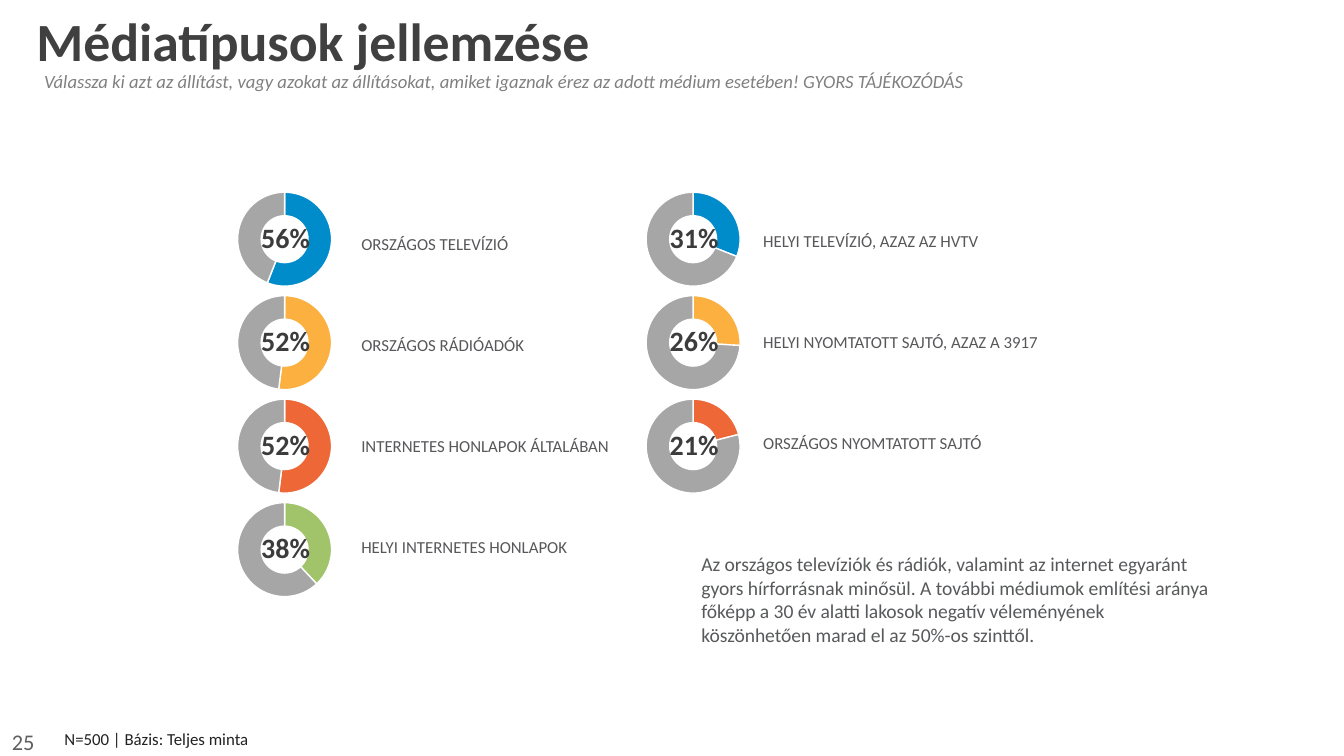
from lxml.etree import SubElement
from pptx import Presentation
from pptx.chart.data import CategoryChartData
from pptx.dml.color import RGBColor
from pptx.enum.chart import XL_CHART_TYPE
from pptx.enum.text import MSO_ANCHOR, PP_ALIGN
from pptx.oxml.ns import qn
from pptx.util import Inches, Pt

FONT = "Calibri"
REST = "A6A6A6"
RING_COLOURS = ["008BCA", "FBB040", "ED6737", "A1C46B"]
RING_TOP = 1.24
RING_STEP = 0.77
RING_COLUMNS = [(1.54, [56, 52, 52, 38]), (4.58, [31, 26, 21])]
LABEL_COLUMNS = [
    ((2.59, 1.69, 2.56, 2.52), [
        "ORSZÁGOS TELEVÍZIÓ",
        "ORSZÁGOS RÁDIÓADÓK",
        "INTERNETES HONLAPOK ÁLTALÁBAN",
        "HELYI INTERNETES HONLAPOK",
    ]),
    ((5.58, 1.67, 2.31, 1.77), [
        "HELYI TELEVÍZIÓ, AZAZ AZ HVTV",
        "HELYI NYOMTATOTT SAJTÓ, AZAZ A 3917",
        "ORSZÁGOS NYOMTATOTT SAJTÓ",
    ]),
]
QUESTION = (
    "Válassza ki azt az állítást, vagy azokat az állításokat, amiket igaznak "
    "érez az adott médium esetében! GYORS TÁJÉKOZÓDÁS"
)
SUMMARY = (
    "Az országos televíziók és rádiók, valamint az internet egyaránt gyors "
    "hírforrásnak minősül. A további médiumok említési aránya főképp a 30 év "
    "alatti lakosok negatív véleményének köszönhetően marad el az 50%-os szinttől."
)


def colour(value):
    """Turn a hex string into a colour."""
    return RGBColor.from_string(value)


def style_font(font, size, shade, bold=False, italic=False):
    """Set the typeface, size, colour and weight of a font."""
    font.name = FONT
    font.size = Pt(size)
    font.bold = bold
    font.italic = italic
    font.color.rgb = colour(shade)


def set_insets(frame, side, top):
    """Set equal insets left and right, and top and bottom."""
    frame.margin_left = frame.margin_right = Inches(side)
    frame.margin_top = frame.margin_bottom = Inches(top)


def add_span(para, text, size, shade, **weight):
    """Add one formatted run to a paragraph."""
    span = para.add_run()
    span.text = text
    style_font(span.font, size, shade, **weight)


def add_text(page, place, lines, size, shade, align=PP_ALIGN.LEFT, gap=0, **weight):
    """Add a wrapping text box with one paragraph a line."""
    box = page.shapes.add_textbox(*map(Inches, place))
    frame = box.text_frame
    frame.word_wrap = True
    for index, line in enumerate(lines):
        para = frame.add_paragraph() if index else frame.paragraphs[0]
        para.alignment = align
        if index and gap:
            para.space_before = Pt(gap)
        add_span(para, line, size, shade, **weight)
    return box


def set_plot_area(chart, x, y, w, h):
    """Place the inner plot area as fractions of the chart."""
    plot_area = chart._chartSpace.chart.plotArea
    layout = plot_area.find(qn("c:layout"))
    if layout is None:
        layout = SubElement(plot_area, qn("c:layout"))
        plot_area.insert(0, layout)
    manual = SubElement(layout, qn("c:manualLayout"))
    settings = [("layoutTarget", "inner"), ("xMode", "edge"), ("yMode", "edge"),
                ("x", x), ("y", y), ("w", w), ("h", h)]
    for name, value in settings:
        SubElement(manual, qn(f"c:{name}")).set("val", str(value))


def add_ring(page, left, top, share, shade):
    """Add a doughnut chart with its percentage in the middle."""
    data = CategoryChartData()
    data.categories = ["1", "2"]
    data.add_series("Series 1", [share, 100 - share])
    place = map(Inches, (left, top, 1.07, 1.06))
    chart = page.shapes.add_chart(XL_CHART_TYPE.DOUGHNUT, *place, data).chart
    chart.has_legend = False
    chart.has_title = False
    style_font(chart.font, 18, "003399")
    set_plot_area(chart, 0.17, 0.18, 0.74, 0.66)
    plot = chart.plots[0]
    plot.vary_by_categories = True
    plot._element.find(qn("c:holeSize")).set("val", "61")
    for index, fill in enumerate([shade, REST]):
        part = plot.series[0].points[index].format
        part.fill.solid()
        part.fill.fore_color.rgb = colour(fill)
        part.line.color.rgb = colour("FFFFFF")
        part.line.width = Pt(0.75)
    add_text(page, (left + 0.15, top + 0.35, 0.87, 0.35), [f"{share}%"],
             15, "3C3C3C", PP_ALIGN.CENTER, bold=True)


def add_title(page, text):
    """Place and format the title placeholder."""
    title = page.shapes.title
    title.left, title.top, title.width, title.height = map(
        Inches, (0.23, 0.01, 9.49, 0.51))
    frame = title.text_frame
    frame.vertical_anchor = MSO_ANCHOR.TOP
    set_insets(frame, 0.04, 0.05)
    para = frame.paragraphs[0]
    para.alignment = PP_ALIGN.LEFT
    add_span(para, text, 28.8, "404040", bold=True)


def main():
    """Build the slide and save it."""
    deck = Presentation()
    deck.slide_width = Inches(10)
    deck.slide_height = deck.slide_width * 9 // 16
    page = deck.slides.add_slide(deck.slide_layouts[5])

    add_title(page, "Médiatípusok jellemzése")
    add_text(page, (0.23, 0.47, 8.47, 0.24), [QUESTION], 10, "808080", italic=True)
    for left, shares in RING_COLUMNS:
        for row, (share, shade) in enumerate(zip(shares, RING_COLOURS)):
            add_ring(page, left, RING_TOP + row * RING_STEP, share, shade)
    for place, labels in LABEL_COLUMNS:
        add_text(page, place, labels, 9, "58585B", gap=43.3)
    add_text(page, (5.12, 4.06, 4.01, 0.81), [SUMMARY], 10.5, "58595B")

    number = add_text(page, (-0.01, 5.37, 2.33, 0.3), ["25"], 12, "5F5F5F")
    number.text_frame.vertical_anchor = MSO_ANCHOR.MIDDLE
    base = add_text(page, (0.48, 5.42, 5.26, 0.45), ["N=500 | Bázis: Teljes minta"],
                    9, "222223")
    set_insets(base.text_frame, 0, 0)
    deck.save("out.pptx")


if __name__ == "__main__":
    main()
